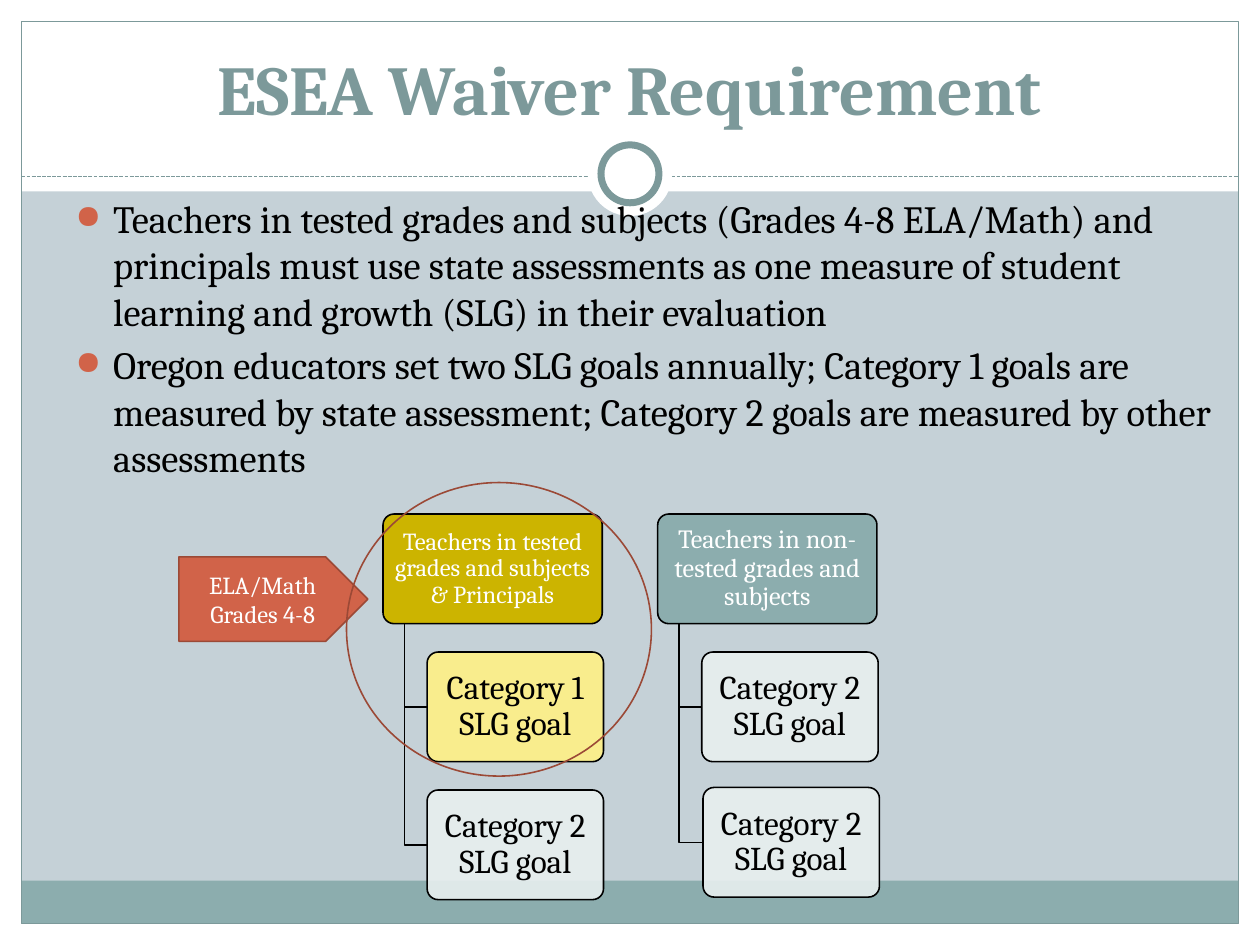
from dataclasses import dataclass
from typing import Optional

from lxml import etree
from pptx import Presentation
from pptx.dml.color import RGBColor
from pptx.enum import dml, shapes, text
from pptx.oxml import ns
from pptx.util import Inches, Pt

W, H = 10, 7.5
FONT = "Cambria"
WHITE, BLACK = "FFFFFF", "000000"
SLATE, TEAL, PALE = "7C999A", "8CADAE", "E8EFEF"
RED, DARK_RED = "D16349", "9B4936"
MARGIN = 0.17

# Grid of the two goal trees
LEFT, TOP = 3.04, 4.08
COL_STEP, ROW_STEP = 2.18, 1.095
HEAD_W, GOAL_W, BOX_H = 1.74, 1.4, 0.87
TRUNK, INDENT = 0.17, 0.35

Kind = shapes.MSO_SHAPE


@dataclass
class Goal:
    label: str
    fill: str
    dx: float = 0
    dy: float = 0


@dataclass
class Tree:
    head: str
    fill: str
    size: int
    goals: list[Goal]


TREES = [
    Tree("Teachers in tested grades and subjects & Principals", "CCB400", 14,
         [Goal("Category 1 SLG goal", "FFF185"), Goal("Category 2 SLG goal", PALE)]),
    Tree("Teachers in non-tested grades and subjects", TEAL, 15,
         [Goal("Category 2 SLG goal", PALE),
          Goal("Category 2 SLG goal", PALE, 0.01, -0.02)]),
]
BULLETS = [
    "Teachers in tested grades and subjects (Grades 4-8 ELA/Math) and principals must "
    "use state assessments as one measure of student learning and growth (SLG) in "
    "their evaluation",
    "Oregon educators set two SLG goals annually; Category 1 goals are measured by "
    "state assessment; Category 2 goals are measured by other assessments",
]


def rgb(value: str) -> RGBColor:
    return RGBColor.from_string(value)


def paint(sp, fill: Optional[str], line: Optional[str], width: float = 0.9) -> None:
    sp.shadow.inherit = False
    if fill:
        sp.fill.solid()
        sp.fill.fore_color.rgb = rgb(fill)
    else:
        sp.fill.background()
    if line:
        sp.line.color.rgb = rgb(line)
        sp.line.width = Pt(width)
    else:
        sp.line.fill.background()


def add_box(s, kind, x: float, y: float, w: float, h: float,
            fill: Optional[str] = None, line: Optional[str] = None, width: float = 0.9):
    sp = s.shapes.add_shape(kind, Inches(x), Inches(y), Inches(w), Inches(h))
    paint(sp, fill, line, width)
    return sp


def write(tf, lines: list[str], size: float, color: str, align=text.PP_ALIGN.CENTER,
          anchor=text.MSO_ANCHOR.MIDDLE, bold: bool = False) -> None:
    tf.word_wrap = True
    tf.auto_size = text.MSO_AUTO_SIZE.NONE
    tf.vertical_anchor = anchor
    tf.text = "\n".join(lines)
    for p in tf.paragraphs:
        p.alignment = align
        for r in p.runs:
            r.font.name, r.font.size, r.font.bold = FONT, Pt(size), bold
            r.font.color.rgb = rgb(color)


def add_bullet(p, color: str) -> None:
    pPr = p._p.get_or_add_pPr()
    pPr.set("marL", str(Inches(0.3)))
    pPr.set("indent", str(-Inches(0.3)))
    clr = etree.SubElement(pPr, ns.qn("a:buClr"))
    etree.SubElement(clr, ns.qn("a:srgbClr"), val=color)
    etree.SubElement(pPr, ns.qn("a:buSzPct"), val="85000")
    etree.SubElement(pPr, ns.qn("a:buChar"), char="●")


def add_card(s, x: float, y: float, w: float, label: str, fill: str,
             size: int, color: str, inset: float):
    sp = add_box(s, Kind.ROUNDED_RECTANGLE, x, y, w, BOX_H, fill, BLACK)
    sp.adjustments[0] = 0.1
    tf = sp.text_frame
    write(tf, [label], size, color)
    tf.paragraphs[0].line_spacing = 0.9
    tf.margin_left = tf.margin_right = Inches(inset)
    tf.margin_top = tf.margin_bottom = Inches(inset - 0.01)
    return sp


def add_elbow(s, x: float, y: float, to_x: float, to_y: float) -> None:
    builder = s.shapes.build_freeform(Inches(x), Inches(y))
    builder.add_line_segments(
        [(Inches(x), Inches(to_y)), (Inches(to_x), Inches(to_y))], close=False)
    paint(builder.convert_to_shape(), None, BLACK)


def add_tree(s, tree: Tree, col: int) -> None:
    x = LEFT + col * COL_STEP
    add_card(s, x, TOP, HEAD_W, tree.head, tree.fill, tree.size, WHITE, 0.03)
    for row, goal in enumerate(tree.goals, start=1):
        gx, gy = x + INDENT + goal.dx, TOP + row * ROW_STEP + goal.dy
        add_elbow(s, x + TRUNK, TOP + BOX_H, gx, gy + BOX_H / 2)
        sp = add_card(s, gx, gy, GOAL_W, goal.label, goal.fill, 19, BLACK, 0.04)
        clr = sp.fill._xPr.find(ns.qn("a:solidFill"))[0]
        etree.SubElement(clr, ns.qn("a:alpha"), val="90000")


def add_frame(s) -> None:
    for x, y, w, h, fill in [
        (0, H - MARGIN, W, MARGIN, WHITE),
        (0, 0, W, 1.52, WHITE),
        (0, 0, MARGIN, H, WHITE),
        (W - MARGIN, 0, MARGIN, H, WHITE),
        (MARGIN, 6.99, W - 2 * MARGIN, 0.34, TEAL),
    ]:
        add_box(s, Kind.RECTANGLE, x, y, w, h, fill)
    add_box(s, Kind.RECTANGLE, MARGIN, MARGIN, W - 2 * MARGIN, H - 2 * MARGIN,
            None, SLATE, 0.75)
    rule = s.shapes.add_connector(shapes.MSO_CONNECTOR.STRAIGHT, Inches(MARGIN),
                                  Inches(1.4), Inches(W - MARGIN), Inches(1.4))
    rule.line.color.rgb = rgb(SLATE)
    rule.line.width = Pt(0.75)
    rule.line.dash_style = dml.MSO_LINE.SQUARE_DOT
    etree.SubElement(rule.element.spPr, ns.qn("a:effectLst"))
    for d, line in [(0.67, None), (0.46, SLATE)]:
        add_box(s, Kind.OVAL, (W - d) / 2, 1.38 - d / 2, d, d, WHITE, line, 4)


def main() -> None:
    prs = Presentation()
    prs.slide_width, prs.slide_height = Inches(W), Inches(H)
    s = prs.slides.add_slide(prs.slide_layouts[5])
    s.background.fill.solid()
    s.background.fill.fore_color.rgb = rgb("C5D1D7")
    add_frame(s)

    # Title, brought in front of the frame
    title = s.shapes.title
    s.shapes.element.append(title.element)
    title.left, title.top = Inches(0.33), Inches(0.25)
    title.width, title.height = Inches(9.33), Inches(0.83)
    write(title.text_frame, ["ESEA Waiver Requirement"], 40, SLATE,
          anchor=text.MSO_ANCHOR.BOTTOM, bold=True)

    # Bullets
    body = s.shapes.add_textbox(Inches(0.5), Inches(1.5), Inches(9.25), Inches(5.5))
    write(body.text_frame, BULLETS, 22, BLACK, text.PP_ALIGN.LEFT, text.MSO_ANCHOR.TOP)
    for p in body.text_frame.paragraphs:
        p.space_before = Pt(4.4)
        add_bullet(p, RED)

    # Goal trees with the tested group marked
    for col, tree in enumerate(TREES):
        add_tree(s, tree, col)
    tag = add_box(s, Kind.PENTAGON, 1.42, 4.42, 1.5, 0.67, RED, DARK_RED)
    write(tag.text_frame, ["ELA/Math", "Grades 4-8"], 14, WHITE)
    add_box(s, Kind.OVAL, 2.75, 3.83, 2.42, 2.33, None, DARK_RED)

    prs.save("out.pptx")


if __name__ == "__main__":
    main()
